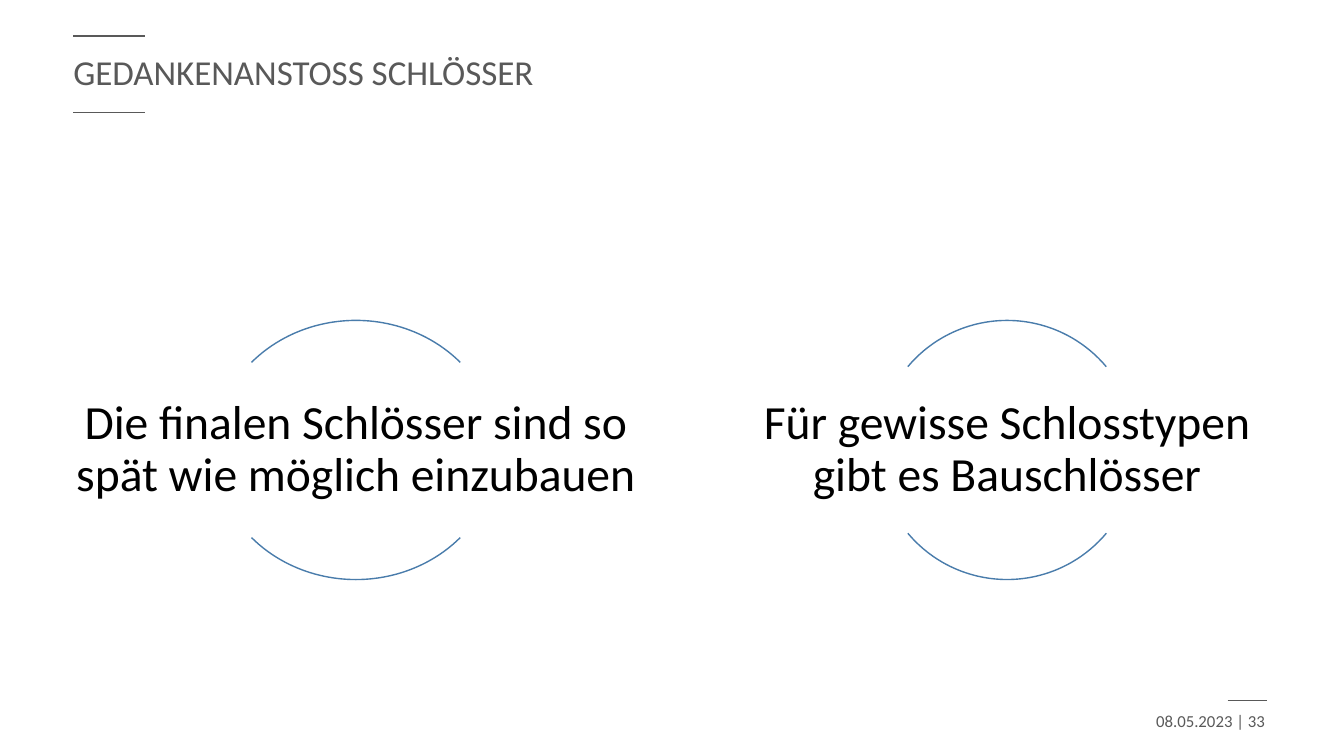
from lxml import etree
from pptx import Presentation
from pptx.dml.color import RGBColor
from pptx.enum import shapes as kinds, text as layout
from pptx.oxml.ns import qn
from pptx.util import Cm, Pt

GREY = RGBColor(0x59, 0x59, 0x59)
BLUE = RGBColor(0x49, 0x7C, 0xAB)
BLACK = RGBColor(0, 0, 0)

ARC_HEIGHT = 6.53
CENTER_Y = 11.34
# Start and end angles in degrees
ARC_ANGLES = [(220, 320), (40, 140)]
# Center x, arc width, statement
STATEMENTS = [
    (8.97, 7.14, "Die finalen Schlösser sind so spät wie möglich einzubauen"),
    (25.38, 6.53, "Für gewisse Schlosstypen gibt es Bauschlösser"),
]


def add_rule(slide, left, right, y):
    rule = slide.shapes.add_connector(
        kinds.MSO_CONNECTOR.STRAIGHT, Cm(left), Cm(y), Cm(right), Cm(y))
    rule.line.color.rgb = GREY
    rule.line.width = Pt(1)
    etree.SubElement(rule.element.spPr, qn("a:effectLst"))


def add_text(slide, box, content, size, color, align, inset=None, spacing=None):
    shape = slide.shapes.add_textbox(*(Cm(length) for length in box))
    frame = shape.text_frame
    frame.text = content
    frame.word_wrap = True
    frame.vertical_anchor = layout.MSO_ANCHOR.MIDDLE
    if inset is not None:
        frame.margin_left = frame.margin_right = Cm(inset)
        frame.margin_top = frame.margin_bottom = Cm(inset)
    paragraph = frame.paragraphs[0]
    paragraph.alignment = align
    paragraph.line_spacing = spacing
    font = paragraph.runs[0].font
    font.name = "Calibri"
    font.size = Pt(size)
    font.color.rgb = color


def add_arc(slide, center_x, width, angles):
    arc = slide.shapes.add_shape(
        kinds.MSO_SHAPE.ARC, Cm(center_x - width / 2),
        Cm(CENTER_Y - ARC_HEIGHT / 2), Cm(width), Cm(ARC_HEIGHT))
    arc.shadow.inherit = False
    arc.fill.background()
    arc.line.color.rgb = BLUE
    arc.line.width = Pt(1)
    for index, angle in enumerate(angles):
        arc.adjustments[index] = angle * 0.6


def add_statement(slide, center_x, arc_width, content):
    for angles in ARC_ANGLES:
        add_arc(slide, center_x, arc_width, angles)
    # The text is twice as wide as its arcs
    box = (center_x - arc_width, CENTER_Y - 2.1, 2 * arc_width, 4.2)
    add_text(slide, box, content, 34, BLACK, layout.PP_ALIGN.CENTER,
             inset=0.06, spacing=0.9)


def main():
    presentation = Presentation()
    presentation.slide_width = Cm(33.87)
    presentation.slide_height = Cm(19.05)
    slide = presentation.slides.add_slide(presentation.slide_layouts[6])

    # Footer
    add_rule(slide, 30.94, 31.93, 17.65)
    add_text(slide, (24.51, 17.65, 7.62, 1.02), "08.05.2023 | 33", 12, GREY,
             layout.PP_ALIGN.RIGHT)

    # Title between two rules
    for y in (0.91, 2.84):
        add_rule(slide, 1.85, 3.66, y)
    add_text(slide, (1.6, 0.91, 25.43, 1.93), "GEDANKENANSTOSS SCHLÖSSER",
             25, GREY, layout.PP_ALIGN.LEFT, spacing=0.9)

    # Statements framed by arcs
    for statement in STATEMENTS:
        add_statement(slide, *statement)

    presentation.save("out.pptx")


if __name__ == "__main__":
    main()
